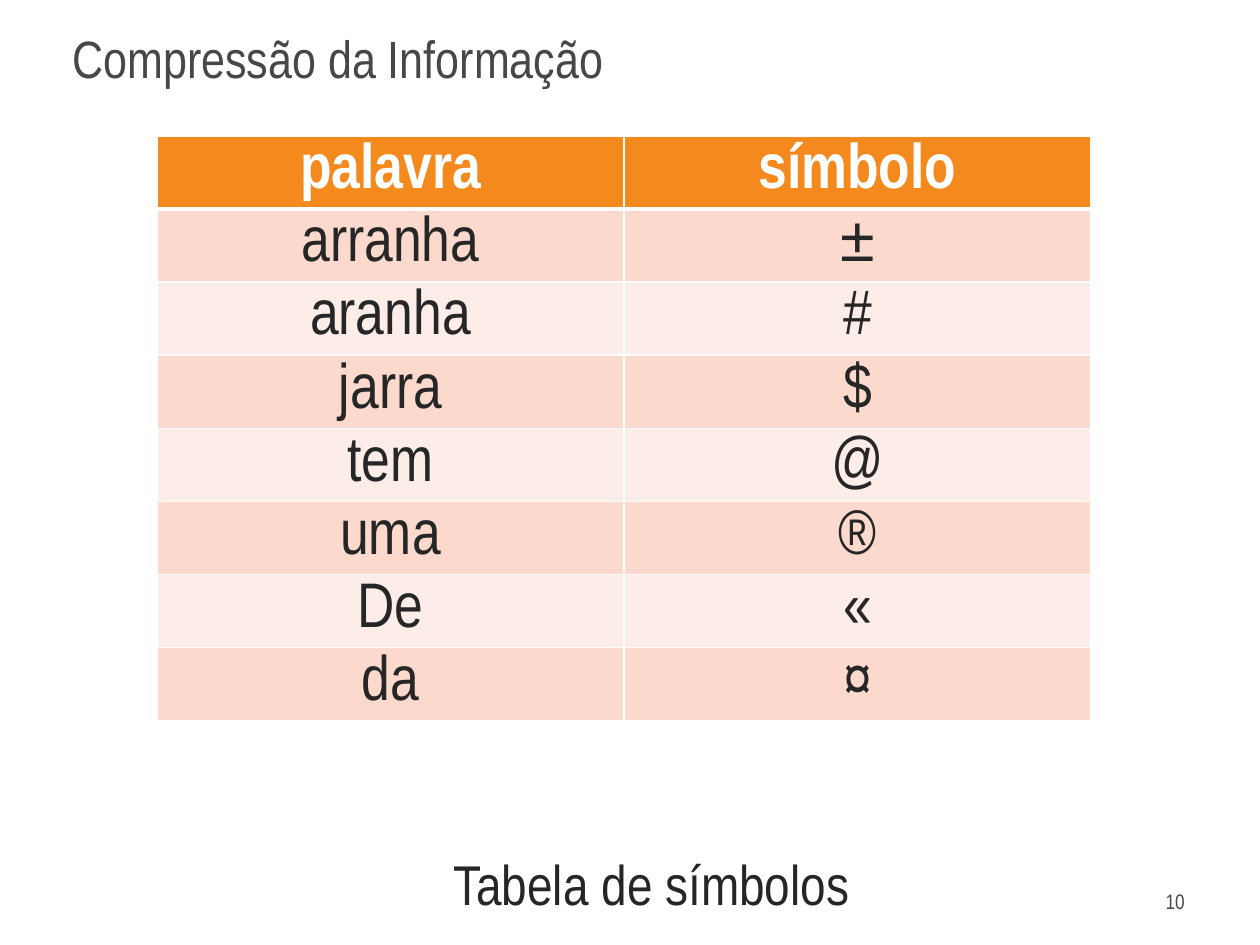
"""Build the symbol table slide about information compression."""
from dataclasses import dataclass

from lxml.etree import SubElement
from pptx import Presentation
from pptx.dml.color import RGBColor
from pptx.enum.text import MSO_ANCHOR, PP_ALIGN
from pptx.oxml.ns import qn
from pptx.slide import Slide
from pptx.table import _Cell
from pptx.text.text import _Paragraph
from pptx.util import Emu, Pt

PX = 914400 // 126
FONT = "Arial Narrow"
COLORS = {
    "heading": "474747",
    "body": "262626",
    "white": "FFFFFF",
    "header": "F4891E",
    "odd": "FBDACD",
    "even": "FDEDE8",
}
ENTRIES = [
    ("palavra", "símbolo"),
    ("arranha", "±"),
    ("aranha", "#"),
    ("jarra", "$"),
    ("tem", "@"),
    ("uma", "®"),
    ("De", "«"),
    ("da", "¤"),
]


@dataclass(frozen=True)
class Label:
    text: str
    left: int
    top: int
    width: int
    height: int
    size: int
    color: str
    align: PP_ALIGN = PP_ALIGN.LEFT
    anchor: MSO_ANCHOR = MSO_ANCHOR.MIDDLE
    wrap: bool = True


LABELS = [
    Label("Compressão da Informação", 60, 10, 1158, 95, 30, "heading"),
    Label("10", 903, 876, 294, 50, 12, "heading", PP_ALIGN.RIGHT),
    Label("Tabela de símbolos", 441, 843, 426, 81, 32, "body",
          anchor=MSO_ANCHOR.TOP, wrap=False),
]


def px(length: int) -> Emu:
    return Emu(length * PX)


def style_paragraph(paragraph: _Paragraph, size: int, color: str,
                    align: PP_ALIGN, bold: bool = False) -> None:
    paragraph.alignment = align
    font = paragraph.font
    font.name, font.size, font.bold = FONT, Pt(size), bold
    font.color.rgb = RGBColor.from_string(COLORS[color])


def draw_label(slide: Slide, label: Label) -> None:
    box = slide.shapes.add_textbox(px(label.left), px(label.top),
                                   px(label.width), px(label.height))
    frame = box.text_frame
    frame.word_wrap = label.wrap
    frame.vertical_anchor = label.anchor
    frame.text = label.text
    style_paragraph(frame.paragraphs[0], label.size, label.color, label.align)


def add_borders(cell: _Cell, widths: dict[str, int]) -> None:
    properties = cell._tc.get_or_add_tcPr()
    for position, (side, width) in enumerate(widths.items()):
        line = properties.makeelement(qn(f"a:{side}"), {"w": str(Pt(width))})
        fill = SubElement(line, qn("a:solidFill"))
        SubElement(fill, qn("a:srgbClr"), val=COLORS["white"])
        properties.insert(position, line)


def draw_entry(cell: _Cell, text: str, row: int) -> None:
    is_header = row == 0
    fill = "header" if is_header else "odd" if row % 2 else "even"
    cell.margin_top = cell.margin_bottom = px(7)
    cell.text = text
    style_paragraph(cell.text_frame.paragraphs[0], 36,
                    "white" if is_header else "body", PP_ALIGN.CENTER, is_header)
    cell.fill.solid()
    cell.fill.fore_color.rgb = RGBColor.from_string(COLORS[fill])
    add_borders(cell, {"lnL": 1, "lnR": 1, "lnT": 3 if row == 1 else 1,
                       "lnB": 3 if is_header else 1})


def draw_symbol_table(slide: Slide) -> None:
    row_height, column_width = 71, 467
    table = slide.shapes.add_table(
        len(ENTRIES), 2, px(157), px(136),
        px(2 * column_width), px(len(ENTRIES) * row_height)).table
    for row, entry in enumerate(ENTRIES):
        for column, text in enumerate(entry):
            draw_entry(table.cell(row, column), text, row)


def main() -> None:
    presentation = Presentation()
    presentation.slide_width, presentation.slide_height = px(1260), px(945)
    slide = presentation.slides.add_slide(presentation.slide_layouts[6])
    draw_symbol_table(slide)
    for label in LABELS:
        draw_label(slide, label)
    presentation.save("out.pptx")


if __name__ == "__main__":
    main()
